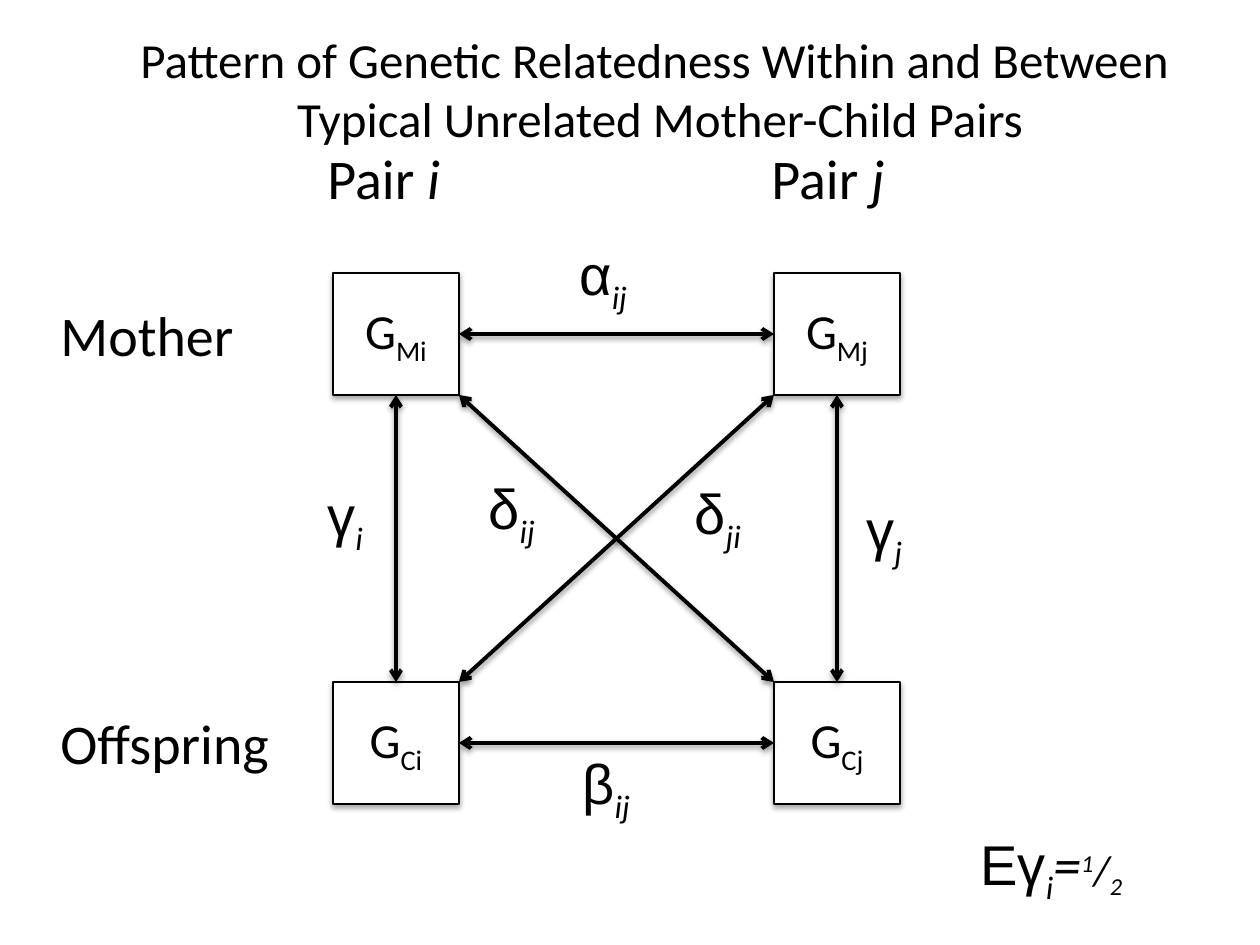
"""Build a slide diagramming genetic relatedness between two mother-child pairs."""
from lxml.etree import SubElement
from pptx import Presentation
from pptx.dml.color import RGBColor
from pptx.enum.shapes import MSO_CONNECTOR as Link, MSO_SHAPE as Preset
from pptx.enum.text import MSO_ANCHOR as Anchor, MSO_AUTO_SIZE as Fit, PP_ALIGN as Align
from pptx.oxml.ns import qn
from pptx.util import Emu, Pt

EMU_PER_PX = 914400 / 126
COLORS = {"ink": "000000", "paper": "FFFFFF"}
INK = RGBColor.from_string(COLORS["ink"])
PAPER = RGBColor.from_string(COLORS["paper"])


def px(*lengths):
    return [Emu(round(length * EMU_PER_PX)) for length in lengths]


def write(paragraph, size, runs, align=Align.LEFT):
    paragraph.alignment = align
    paragraph.font.size = Pt(size)
    paragraph.font.name = "Calibri"
    paragraph.font.color.rgb = INK
    for text, style in runs:
        run = paragraph.add_run()
        run.text = text
        if "font" in style:
            run.font.name = style["font"]
        if "size" in style:
            run.font.size = Pt(style["size"])
        if "italic" in style:
            run.font.italic = True
        if "baseline" in style:
            run._r.get_or_add_rPr().set("baseline", str(style["baseline"] * 1000))


deck = Presentation()
deck.slide_width, deck.slide_height = px(1260, 945)
slide = deck.slides.add_slide(deck.slide_layouts[5])
shapes = slide.shapes

title = shapes.title
title.left, title.top, title.width, title.height = px(125, 23, 1070, 131)
heading = title.text_frame
heading.auto_size = Fit.NONE
heading.vertical_anchor = Anchor.TOP
heading.word_wrap = True
write(heading.paragraphs[0], 28,
      [("Pattern of Genetic Relatedness Within and Between ", {})], Align.CENTER)
write(heading.add_paragraph(), 28,
      [("Typical Unrelated Mother-Child Pairs", {})], Align.CENTER)

BOX_W, BOX_H = 126, 122
columns = {"i": 333, "j": 774}
rows = {"M": 273, "C": 682}
shadowed = []

for role, top in rows.items():
    for pair, left in columns.items():
        genotype = shapes.add_shape(Preset.RECTANGLE, *px(left, top, BOX_W, BOX_H))
        genotype.fill.solid()
        genotype.fill.fore_color.rgb = PAPER
        genotype.line.color.rgb = INK
        genotype.line.width = Pt(0.75)
        genotype.text_frame.vertical_anchor = Anchor.MIDDLE
        write(genotype.text_frame.paragraphs[0], 28,
              [("G", {}), (role + pair, {"baseline": -25})], Align.CENTER)
        shadowed.append((genotype, 23000, 35))

left_i, left_j = columns.values()
top_m, top_c = rows.values()
right_i, bottom_m = left_i + BOX_W, top_m + BOX_H
paths = [(left + BOX_W // 2, bottom_m, left + BOX_W // 2, top_c) for left in (left_j, left_i)]
paths += [(left_j, top + BOX_H // 2, right_i, top + BOX_H // 2) for top in (top_m, top_c)]
paths += [(left_j, top_c, right_i, bottom_m), (right_i, top_c, left_j, bottom_m)]

for ends in paths:
    relation = shapes.add_connector(Link.STRAIGHT, *px(*ends))
    relation.line.color.rgb = INK
    relation.line.width = Pt(2.25)
    outline = relation._element.spPr.find(qn("a:ln"))
    for end in ("a:headEnd", "a:tailEnd"):
        SubElement(outline, qn(end), type="arrow")
    shadowed.append((relation, 20000, 38))

for part, distance, opacity in shadowed:
    effects = SubElement(part._element.spPr, qn("a:effectLst"))
    shadow = SubElement(effects, qn("a:outerShdw"), blurRad="40000", dist=str(distance),
                        dir="5400000", rotWithShape="0")
    shade = SubElement(shadow, qn("a:srgbClr"), val=COLORS["ink"])
    SubElement(shade, qn("a:alpha"), val=str(opacity * 1000))

GREEK = {"font": "Arial"}
ITALIC = {"italic": True}
SUBSCRIPT = {"italic": True, "baseline": -25}
coefficients = [
    ("α", "ij", 567, 233), ("β", "ij", 570, 742),
    ("δ", "ij", 476, 467), ("δ", "ji", 682, 472),
    ("γ", "i", 315, 474), ("γ", "j", 854, 488),
]
labels = [(left, top, 92, [(letter, GREEK), (index, SUBSCRIPT)])
          for letter, index, left, top in coefficients]
labels += [
    (48, 294, 200, [("Mother", {})]),
    (48, 702, 237, [("Offspring", {})]),
    (315, 137, 142, [("Pair ", {}), ("i", ITALIC)]),
    (759, 137, 142, [("Pair ", {}), ("j", ITALIC)]),
    (968, 823, 226, [
        ("Εγ", GREEK), ("i", SUBSCRIPT), ("=", ITALIC),
        ("1", {"italic": True, "size": 24, "baseline": 30}),
        ("/", {"italic": True, "size": 24}),
        ("2", {"italic": True, "size": 24, "baseline": -25}),
    ]),
]

for left, top, width, runs in labels:
    label = shapes.add_textbox(*px(left, top, width, 81)).text_frame
    label.word_wrap = True
    label.auto_size = Fit.SHAPE_TO_FIT_TEXT
    write(label.paragraphs[0], 32, runs)

deck.save("out.pptx")
